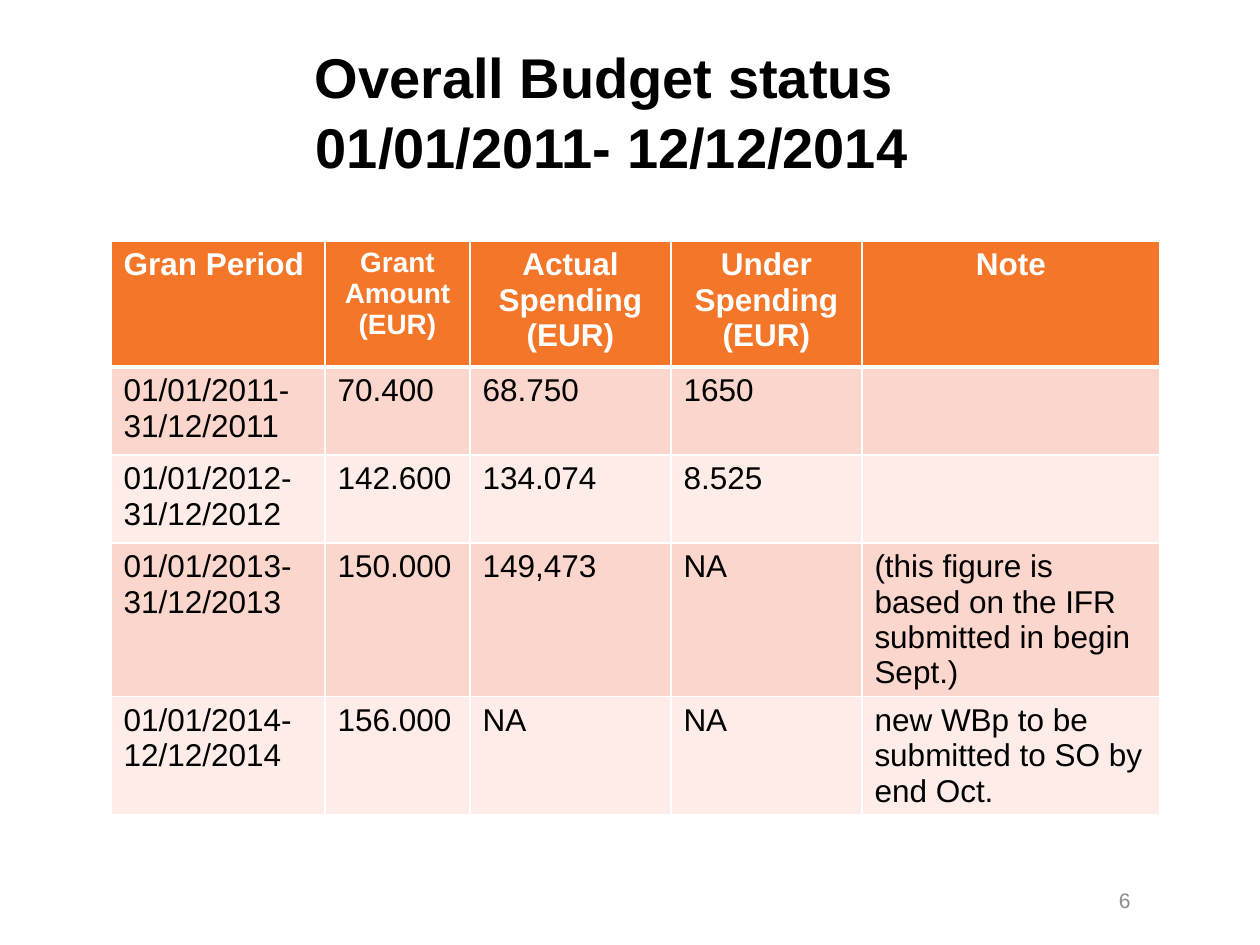
"""Build the overall budget status slide."""
from dataclasses import dataclass

from lxml import etree
from pptx import Presentation
from pptx.dml.color import RGBColor
from pptx.enum.text import MSO_ANCHOR, MSO_AUTO_SIZE, PP_ALIGN
from pptx.oxml.ns import qn
from pptx.util import Emu, Pt

LEFT, CENTER, RIGHT = PP_ALIGN.LEFT, PP_ALIGN.CENTER, PP_ALIGN.RIGHT
MIDDLE = MSO_ANCHOR.MIDDLE
NO_AUTOFIT = MSO_AUTO_SIZE.NONE
TITLE_ONLY = 5
EMU_PER_PX = 914400 / 126
FONT = "Arial"
BLACK, WHITE, GRAY = "000000", "FFFFFF", "8C8C8C"
ORANGE, BANDS = "F47729", ("FBD6CD", "FDECE8")
COLUMN_WIDTHS = (214, 145, 201, 191, 298)
ROW_HEIGHTS = (126, 88, 88, 88, 88)


@dataclass(frozen=True)
class Heading:
    label: str
    size: int = 18
    align: PP_ALIGN = CENTER


@dataclass(frozen=True)
class Grant:
    period: str
    amount: str
    spent: str
    unspent: str
    note: str = ""


HEADINGS = (
    Heading("Gran Period", align=LEFT),
    Heading("Grant Amount (EUR)", size=16),
    Heading("Actual Spending\n(EUR)"),
    Heading("Under Spending\n(EUR)"),
    Heading("Note"),
)
GRANTS = (
    Grant("01/01/2011-31/12/2011", "70.400", "68.750", "1650"),
    Grant("01/01/2012-31/12/2012", "142.600", "134.074", "8.525"),
    Grant("01/01/2013-31/12/2013", "150.000", "149,473", "NA",
          "(this figure is based on the IFR submitted in begin Sept.)"),
    Grant("01/01/2014-12/12/2014", "156.000", "NA", "NA",
          "new WBp to be submitted to SO by end Oct."),
)


def px(length: int) -> Emu:
    return Emu(round(length * EMU_PER_PX))


def color(code: str) -> RGBColor:
    return RGBColor.from_string(code)


def write(frame, text: str, *, size: int = 18, ink: str = BLACK, bold: bool = False,
          align: PP_ALIGN = LEFT, spacing: float | None = None) -> None:
    frame.text = text
    for paragraph in frame.paragraphs:
        paragraph.alignment = align
        paragraph.line_spacing = spacing
        font = paragraph.font
        font.name, font.size, font.bold = FONT, Pt(size), bold
        font.color.rgb = color(ink)


def paint_cell(cell, fill: str, top: int = 1, bottom: int = 1) -> None:
    cell.fill.solid()
    cell.fill.fore_color.rgb = color(fill)
    properties = cell._tc.get_or_add_tcPr()
    widths = {"lnL": 1, "lnR": 1, "lnT": top, "lnB": bottom}
    for position, (side, width) in enumerate(widths.items()):
        border = etree.Element(qn(f"a:{side}"), w=str(Pt(width)))
        solid = etree.SubElement(border, qn("a:solidFill"))
        etree.SubElement(solid, qn("a:srgbClr"), val=WHITE)
        properties.insert(position, border)


def add_title(slide) -> None:
    title = slide.shapes.title
    title.left, title.top, title.width, title.height = map(px, (125, 35, 974, 149))
    frame = title.text_frame
    frame.vertical_anchor = MIDDLE
    frame.auto_size = NO_AUTOFIT
    write(frame, "Overall Budget status \v01/01/2011- 12/12/2014",
          size=32, bold=True, align=CENTER, spacing=1.04)


def add_budget_table(slide) -> None:
    table = slide.shapes.add_table(
        len(ROW_HEIGHTS), len(COLUMN_WIDTHS), px(111), px(241),
        px(sum(COLUMN_WIDTHS)), px(sum(ROW_HEIGHTS))).table
    for column, width in zip(table.columns, COLUMN_WIDTHS):
        column.width = px(width)
    for row, height in zip(table.rows, ROW_HEIGHTS):
        row.height = px(height)
    for index, heading in enumerate(HEADINGS):
        cell = table.cell(0, index)
        paint_cell(cell, ORANGE, bottom=3)
        write(cell.text_frame, heading.label, size=heading.size, ink=WHITE,
              bold=True, align=heading.align)
    for number, grant in enumerate(GRANTS):
        values = (grant.period, grant.amount, grant.spent, grant.unspent, grant.note)
        for index, value in enumerate(values):
            cell = table.cell(number + 1, index)
            paint_cell(cell, BANDS[number % 2], top=1 if number else 3)
            write(cell.text_frame, value)


def add_page_number(slide) -> None:
    frame = slide.shapes.add_textbox(px(1065), px(875), px(78), px(50)).text_frame
    frame.word_wrap = True
    frame.vertical_anchor = MIDDLE
    write(frame, "6", size=12, ink=GRAY, align=RIGHT)


def main() -> None:
    presentation = Presentation()
    presentation.slide_width, presentation.slide_height = px(1260), px(945)
    slide = presentation.slides.add_slide(presentation.slide_layouts[TITLE_ONLY])
    add_title(slide)
    add_budget_table(slide)
    add_page_number(slide)
    presentation.save("out.pptx")


if __name__ == "__main__":
    main()
